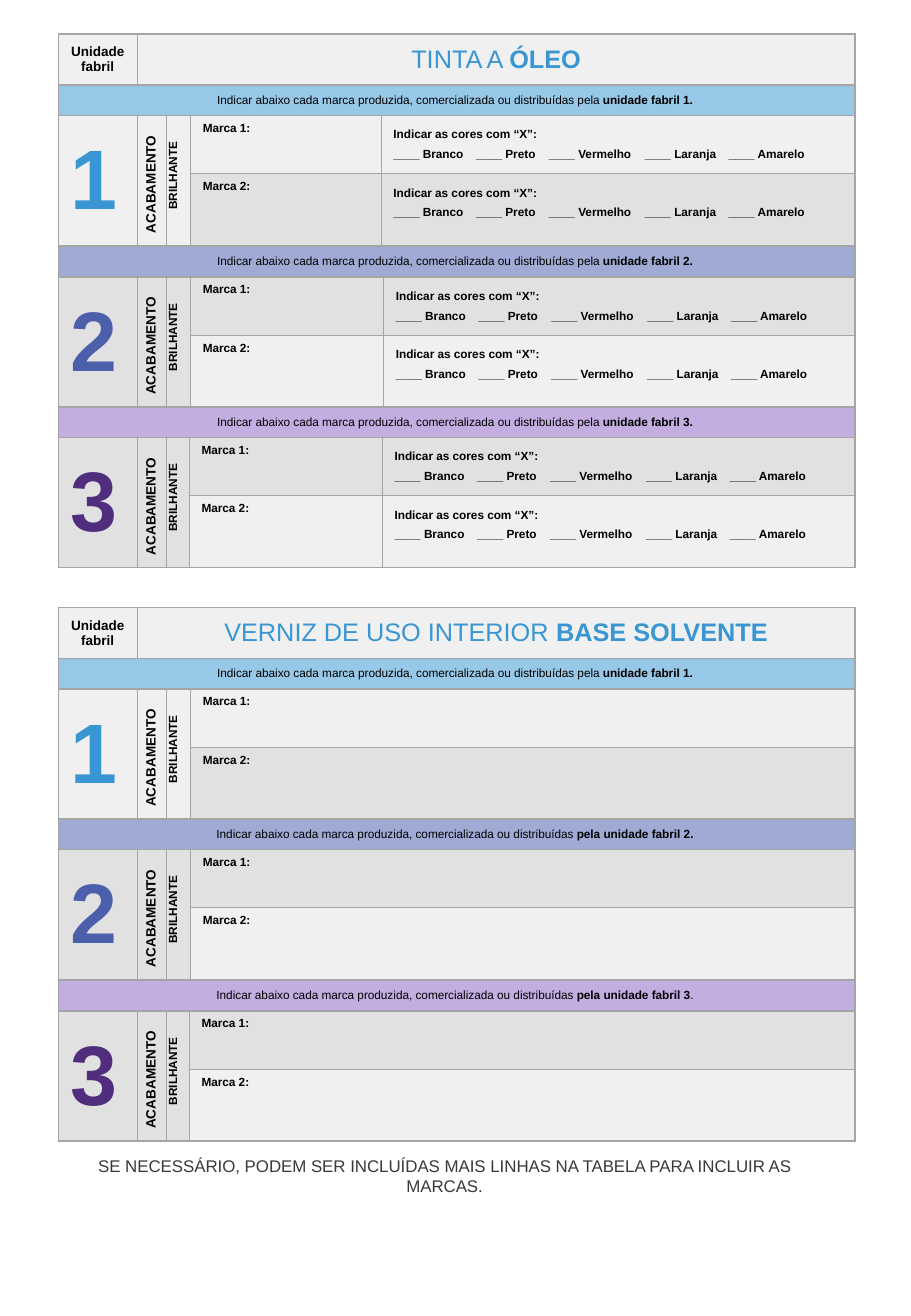
from lxml import etree
from pptx import Presentation
from pptx import util as u
from pptx.dml.color import RGBColor
from pptx.enum import text
from pptx.oxml.ns import qn

LEFT, WIDTH = 0.48, 6.55
LIGHT, DARK = "F0F0F0", "E1E1E1"
TITLE_BLUE = "3A96D2"
NOTICE = "Indicar abaixo cada marca produzida, comercializada ou distribuídas "
COLORS_TITLE = "Indicar as cores com “X”:"
COLORS_LINE = "\t".join(f"____ {c}" for c in
                        ("Branco", "Preto", "Vermelho", "Laranja", "Amarelo"))
COLOR_TABS = (0.68, 1.28, 2.07, 2.76)

# Factory unit: band fill, number colour, side fill, width of the finish column
UNITS = {
    1: ("98C8E8", TITLE_BLUE, LIGHT, 0.2),
    2: ("9FABD5", "4B5FAB", DARK, 0.2),
    3: ("C3ADE1", "502D7D", DARK, 0.19),
}


def rgb(value):
    return RGBColor.from_string(value)


class Form:
    font = "Arial"
    border = "A5A5A5"

    def __init__(self, slide):
        self.slide = slide

    def format_run(self, r, size, color="000000", bold=True):
        r.font.name, r.font.size, r.font.bold = self.font, u.Pt(size), bold
        r.font.color.rgb = rgb(color)

    def table(self, top, cols, rows):
        shape = self.slide.shapes.add_table(
            len(rows), len(cols), u.Inches(LEFT), u.Inches(top),
            u.Inches(WIDTH), u.Inches(sum(rows)))
        tbl = shape.table
        tbl.first_row = tbl.horz_banding = False
        for column, width in zip(tbl.columns, cols):
            column.width = u.Inches(width)
        for row, height in zip(tbl.rows, rows):
            row.height = u.Inches(height)
        return tbl

    def outline(self, cell):
        tcPr = cell._tc.get_or_add_tcPr()
        for i, side in enumerate(("a:lnL", "a:lnR", "a:lnT", "a:lnB")):
            ln = etree.Element(qn(side), w=str(u.Pt(1)))
            fill = etree.SubElement(ln, qn("a:solidFill"))
            etree.SubElement(fill, qn("a:srgbClr"), val=self.border)
            tcPr.insert(i, ln)

    def cell(self, tbl, row, col, fill, runs, size, color="000000",
             span=(1, 1), centered=False, middle=True, vertical=False):
        """Fill one cell or merged area; runs are (text, bold) pairs."""
        last_row, last_col = row + span[0] - 1, col + span[1] - 1
        for i in range(row, last_row + 1):
            for j in range(col, last_col + 1):
                part = tbl.cell(i, j)
                part.fill.solid()
                part.fill.fore_color.rgb = rgb(fill)
                self.outline(part)
        cell = tbl.cell(row, col)
        if span != (1, 1):
            cell.merge(tbl.cell(last_row, last_col))
        if middle:
            cell.vertical_anchor = text.MSO_ANCHOR.MIDDLE
        if vertical:
            cell._tc.get_or_add_tcPr().set("vert", "vert270")
        p = cell.text_frame.paragraphs[0]
        if centered:
            p.alignment = text.PP_ALIGN.CENTER
        for words, bold in runs:
            r = p.add_run()
            r.text = words
            self.format_run(r, size, color, bold)
        return cell

    def finish(self, tbl, row, fill):
        self.cell(tbl, row, 1, fill, [("ACABAMENTO", True)], 8,
                  span=(2, 1), vertical=True)
        cell = self.cell(tbl, row, 2, fill, [("BRILHANTE", True)], 7,
                         span=(2, 1), centered=True, vertical=True)
        cell.margin_left = cell.margin_right = u.Inches(0.05)
        cell.margin_top = cell.margin_bottom = 0
        p = cell.text_frame.paragraphs[0]
        p.space_before = p.space_after = u.Pt(4)
        p._p.get_or_add_pPr().set("marL", str(u.Inches(0.08)))

    def colors(self, tbl, row, fill):
        cell = self.cell(tbl, row, 4, fill, [], 7, middle=False)
        cell.text_frame.text = f"{COLORS_TITLE}\n{COLORS_LINE}"
        for p in cell.text_frame.paragraphs:
            p.line_spacing = 1.5
            for r in p.runs:
                self.format_run(r, 7)
        tabs = etree.SubElement(p._p.get_or_add_pPr(), qn("a:tabLst"))
        for stop in COLOR_TABS:
            etree.SubElement(tabs, qn("a:tab"), pos=str(u.Inches(stop)), algn="l")

    def unit(self, top, number, notice, title=None, brand_width=None):
        band, color, side, finish_width = UNITS[number]
        cols = [0.65, 0.23, finish_width]
        if brand_width:
            cols.append(brand_width)
        cols.append(round(WIDTH - sum(cols), 2))
        rows = [0.25, 0.48, 0.59]
        if title:
            rows.insert(0, 0.42)
        tbl = self.table(top, cols, rows)
        row = 0
        # Heading
        if title:
            self.cell(tbl, 0, 0, LIGHT, [("Unidade fabril", True)], 8, centered=True)
            self.cell(tbl, 0, 1, LIGHT, title, 15, TITLE_BLUE,
                      span=(1, len(cols) - 1), centered=True)
            row = 1
        # Instruction band
        self.cell(tbl, row, 0, band, notice, 7, span=(1, len(cols)), centered=True)
        # Number and finish
        row += 1
        self.cell(tbl, row, 0, side, [(str(number), True)], 50, color, span=(2, 1))
        self.finish(tbl, row, side)
        # Brands
        for i, fill in enumerate((side, DARK if side == LIGHT else LIGHT)):
            self.cell(tbl, row + i, 3, fill, [(f"Marca {i + 1}:", True)], 7,
                      middle=False)
            if brand_width:
                self.colors(tbl, row + i, fill)

    def note(self, left, top, width, height, words):
        sp = self.slide.shapes.add_textbox(*map(u.Inches, (left, top, width, height)))
        tf = sp.text_frame
        tf.word_wrap = True
        tf.auto_size = text.MSO_AUTO_SIZE.SHAPE_TO_FIT_TEXT
        tf.text = words
        p = tf.paragraphs[0]
        p.alignment = text.PP_ALIGN.CENTER
        self.format_run(p.runs[0], 10, "3B3838", False)


def main():
    prs = Presentation()
    prs.slide_width, prs.slide_height = u.Inches(7.5), u.Inches(10.83)
    form = Form(prs.slides.add_slide(prs.slide_layouts[6]))

    # Oil paint
    oil_title = [("TINTA A ", False), ("ÓLEO", True)]
    for number, top, brand_width in ((1, 0.28, 1.57), (2, 2.03, 1.59), (3, 3.35, 1.59)):
        notice = [(NOTICE + "pela ", False), (f"unidade fabril {number}. ", True)]
        form.unit(top, number, notice, oil_title if number == 1 else None, brand_width)

    # Solvent-based varnish
    form.unit(5, 1, [(NOTICE + "pela ", False), ("unidade fabril 1. ", True)],
              [("VERNIZ DE USO INTERIOR ", False), ("BASE SOLVENTE", True)])
    form.unit(6.74, 2, [(NOTICE, False), ("pela unidade fabril 2. ", True)])
    form.unit(8.07, 3, [(NOTICE, False), ("pela unidade fabril 3", True), (". ", False)])

    # Closing note
    form.note(0.39, 9.46, 6.54, 0.44,
              "SE NECESSÁRIO, PODEM SER INCLUÍDAS MAIS LINHAS NA TABELA "
              "PARA INCLUIR AS MARCAS.")
    prs.save("out.pptx")


if __name__ == "__main__":
    main()
